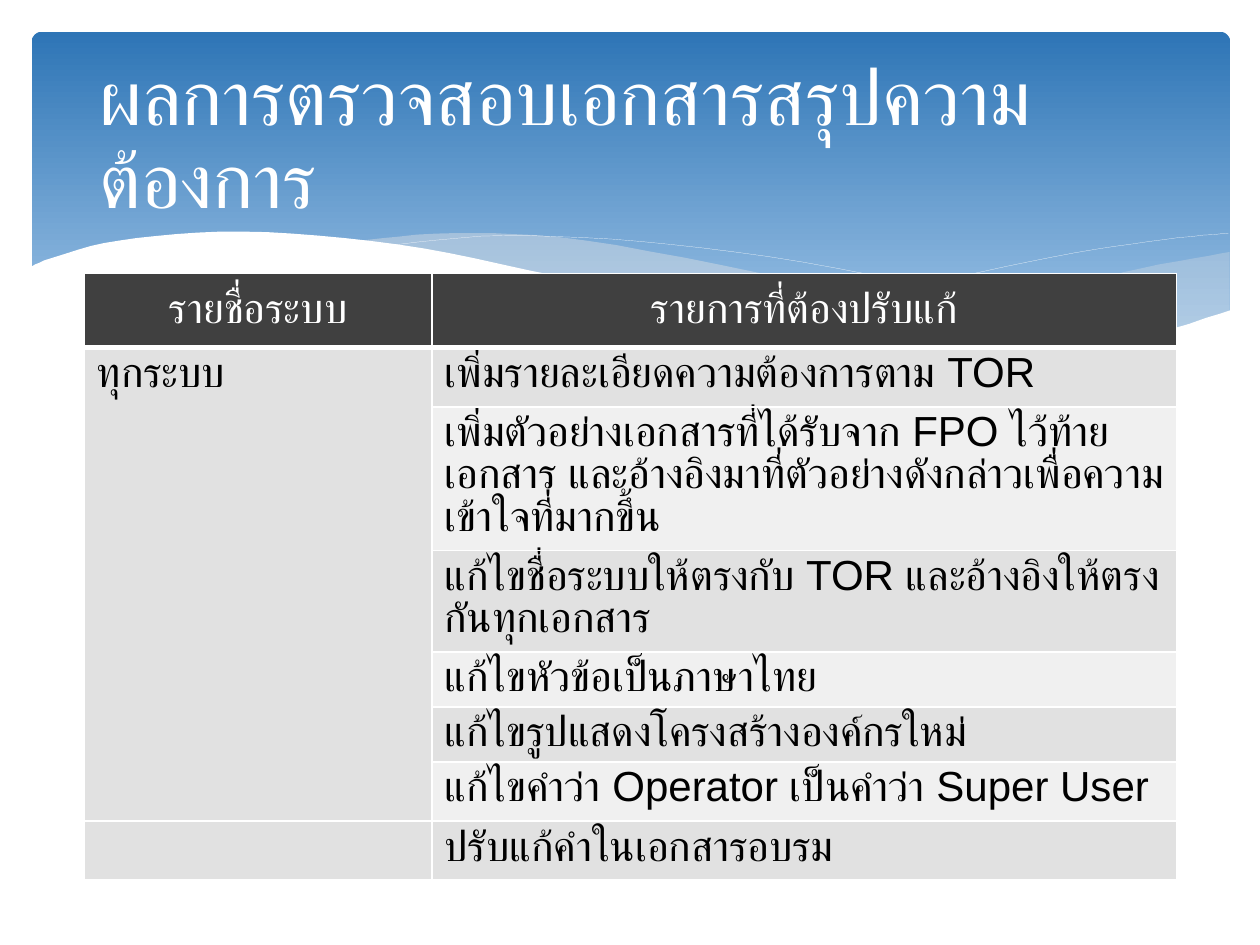
import pptx
import pptx.util
import pptx.dml.color
import pptx.enum.shapes
import pptx.enum.text
import pptx.oxml.ns
from lxml import etree

Cm = pptx.util.Cm
Pt = pptx.util.Pt
qn = pptx.oxml.ns.qn
ALIGN = pptx.enum.text.PP_ALIGN
ANCHOR = pptx.enum.text.MSO_ANCHOR
FONT = "Arial"
LINE_SPACING = 0.9
UNITS_PER_CM = 100
CURVE_STEPS = 6
COLORS = {
    "banner_top": "2E75B6", "banner_bottom": "9DC3E6", "wave": "E7E6E6",
    "white": "FFFFFF", "black": "000000", "header": "404040",
    "band_dark": "E1E1E1", "band_light": "F0F0F0",
}
TITLE = "ผลการตรวจสอบเอกสารสรุปความต้องการ"
HEADERS = ["รายชื่อระบบ", "รายการที่ต้องปรับแก้"]
SYSTEM = "ทุกระบบ"
COLUMN_WIDTHS = [7.01, 15.01]
HEADER_HEIGHT = 1.5
FIXES = [
    ("เพิ่มรายละเอียดความต้องการตาม TOR", 1.19),
    ("เพิ่มตัวอย่างเอกสารที่ได้รับจาก FPO ไว้ท้ายเอกสาร และอ้างอิงมาที่ตัวอย่างดังกล่าวเพื่อความเข้าใจที่มากขึ้น", 2.9),
    ("แก้ไขชื่อระบบให้ตรงกับ TOR และอ้างอิงให้ตรงกันทุกเอกสาร", 2.04),
    ("แก้ไขหัวข้อเป็นภาษาไทย", 1.11),
    ("แก้ไขรูปแสดงโครงสร้างองค์กรใหม่", 1.11),
    ("แก้ไขคำว่า Operator เป็นคำว่า Super User", 1.19),
    ("ปรับแก้คำในเอกสารอบรม", 1.19),
]
RIGHT_WAVE_TOP = [(24.79, 5.08), (23.01, 5.41), (20.45, 6.02), (16.79, 6.73)]
RIGHT_WAVE_BOTTOM = [(16.79, 6.73), (18.59, 6.96), (20.68, 7.06), (22.58, 6.91), (24.79, 6.27)]
MIDDLE_WAVE_TOP = [
    (7.26, 4.85), (9.17, 4.7), (11.81, 4.85), (15.98, 5.64), (19.69, 6.45), (22.68, 6.93)]
MIDDLE_WAVE_BOTTOM = [
    (22.68, 6.93), (21.03, 7.06), (18.34, 6.96), (15.27, 6.48), (11.4, 5.64), (9.19, 5.16),
    (7.26, 4.85)]
WHITE_WAVE_TOP = [
    (24.82, 6.25), (22.83, 6.83), (20.55, 7.04), (16.97, 6.73), (11.35, 5.59), (8.03, 4.93),
    (4.9, 4.67), (2.41, 4.85), (1.02, 5.21), (0.58, 5.41)]
WHITE_WAVE_CORNERS = [(0.58, 8.36), (24.82, 8.36)]
WAVE_LINES = [
    [(7.85, 4.95), (10.19, 4.75), (13.54, 4.93), (17.65, 5.56), (23.04, 6.91)],
    [(15.57, 6.53), (18.29, 5.82), (21.23, 5.18), (23.47, 4.83), (24.77, 4.7)],
]


def rgb(name):
    return pptx.dml.color.RGBColor.from_string(COLORS[name])


def apply_format(target, values):
    for name, value in values.items():
        setattr(target, name, value)


def fill_solid(fill, color):
    fill.solid()
    fill.fore_color.rgb = rgb(color)


def write_text(frame, text, size, color, alignment=ALIGN.LEFT):
    paragraph = frame.paragraphs[0]
    apply_format(paragraph, {"alignment": alignment, "line_spacing": LINE_SPACING})
    run = paragraph.add_run()
    run.text = text
    apply_format(run.font, {"name": FONT, "size": Pt(size)})
    run.font.color.rgb = rgb(color)
    etree.SubElement(run.font._element, qn("a:cs"), typeface=FONT)


def spline(before, start, end, after, t):
    return (start + (end - before) * t / 2
            + (2 * before - 5 * start + 4 * end - after) * t ** 2 / 2
            + (3 * start - before - 3 * end + after) * t ** 3 / 2)


def smooth(knots):
    padded = [knots[0], *knots, knots[-1]]
    points = [knots[0]]
    for neighbours in zip(padded, padded[1:], padded[2:], padded[3:]):
        for step in range(1, CURVE_STEPS + 1):
            points.append(tuple(
                spline(*values, step / CURVE_STEPS) for values in zip(*neighbours)))
    return points


def add_outline(slide, points, closed):
    start, *rest = [
        (round(x * UNITS_PER_CM), round(y * UNITS_PER_CM)) for x, y in points]
    builder = slide.shapes.build_freeform(*start, scale=Cm(1 / UNITS_PER_CM))
    builder.add_line_segments(rest, close=closed)
    outline = builder.convert_to_shape()
    outline.shadow.inherit = False
    return outline


def add_wave(slide, points, color, opacity=100):
    wave = add_outline(slide, points, True)
    wave.line.fill.background()
    fill_solid(wave.fill, color)
    if opacity < 100:
        fill_color = wave.element.spPr.find(qn("a:solidFill")).find(qn("a:srgbClr"))
        etree.SubElement(fill_color, qn("a:alpha"), val=str(opacity * 1000))


def add_wave_line(slide, knots):
    wave_line = add_outline(slide, smooth(knots), False)
    wave_line.fill.background()
    wave_line.line.color.rgb = rgb("white")
    wave_line.line.width = Pt(0.1)


def add_banner(slide):
    banner = slide.shapes.add_shape(
        pptx.enum.shapes.MSO_SHAPE.ROUNDED_RECTANGLE, Cm(0.64), Cm(0.64), Cm(24.16), Cm(6.86))
    banner.adjustments[0] = 0.03
    banner.shadow.inherit = False
    banner.line.fill.background()
    banner.fill.gradient()
    banner.fill.gradient_angle = 270
    stops = [(0, "banner_top"), (0.9, "banner_bottom")]
    for stop, (position, color) in zip(banner.fill.gradient_stops, stops):
        stop.position = position
        stop.color.rgb = rgb(color)


def add_waves(slide):
    add_wave(slide, smooth(RIGHT_WAVE_TOP) + smooth(RIGHT_WAVE_BOTTOM), "wave", 29)
    add_wave(slide, smooth(MIDDLE_WAVE_TOP) + smooth(MIDDLE_WAVE_BOTTOM), "wave", 40)
    for knots in WAVE_LINES:
        add_wave_line(slide, knots)
    add_wave(slide, smooth(WHITE_WAVE_TOP) + WHITE_WAVE_CORNERS, "white")


def place_title(slide):
    title = slide.shapes.title
    apply_format(title, {"left": Cm(1.75), "top": Cm(1.02), "width": Cm(21.9), "height": Cm(3.68)})
    apply_format(title.text_frame, {"word_wrap": True, "vertical_anchor": ANCHOR.MIDDLE})
    write_text(title.text_frame, TITLE, 44, "white")
    slide.shapes.element.append(title.element)


def style_cell(cell, fill, bottom_width=1):
    properties = cell._tc.get_or_add_tcPr()
    for side, width in {"L": 1, "R": 1, "T": 1, "B": bottom_width}.items():
        border = etree.SubElement(properties, qn(f"a:ln{side}"), w=str(Pt(width)))
        border_fill = etree.SubElement(border, qn("a:solidFill"))
        etree.SubElement(border_fill, qn("a:srgbClr"), val=COLORS["white"])
    fill_solid(cell.fill, fill)


def add_fix_table(slide):
    heights = [HEADER_HEIGHT] + [height for text, height in FIXES]
    table = slide.shapes.add_table(
        len(heights), len(HEADERS), Cm(1.7), Cm(5.51),
        Cm(sum(COLUMN_WIDTHS)), Cm(sum(heights))).table
    for column, width in zip(table.columns, COLUMN_WIDTHS):
        column.width = Cm(width)
    for row, height in zip(table.rows, heights):
        row.height = Cm(height)
    for cell, text in zip(table.rows[0].cells, HEADERS):
        style_cell(cell, "header", 3)
        cell.vertical_anchor = ANCHOR.MIDDLE
        write_text(cell.text_frame, text, 24, "white", ALIGN.CENTER)
    for index, (text, height) in enumerate(FIXES, 1):
        system_cell, fix_cell = table.rows[index].cells
        style_cell(system_cell, "band_dark")
        style_cell(fix_cell, "band_dark" if index % 2 else "band_light")
        write_text(fix_cell.text_frame, text, 24, "black")
    shared_cell = table.cell(1, 0)
    shared_cell.merge(table.cell(len(FIXES) - 1, 0))
    write_text(shared_cell.text_frame, SYSTEM, 24, "black")


def main():
    presentation = pptx.Presentation()
    apply_format(presentation, {"slide_width": Cm(25.4), "slide_height": Cm(19.05)})
    slide = presentation.slides.add_slide(presentation.slide_layouts[5])
    add_banner(slide)
    add_waves(slide)
    place_title(slide)
    add_fix_table(slide)
    presentation.save("out.pptx")


if __name__ == "__main__":
    main()
